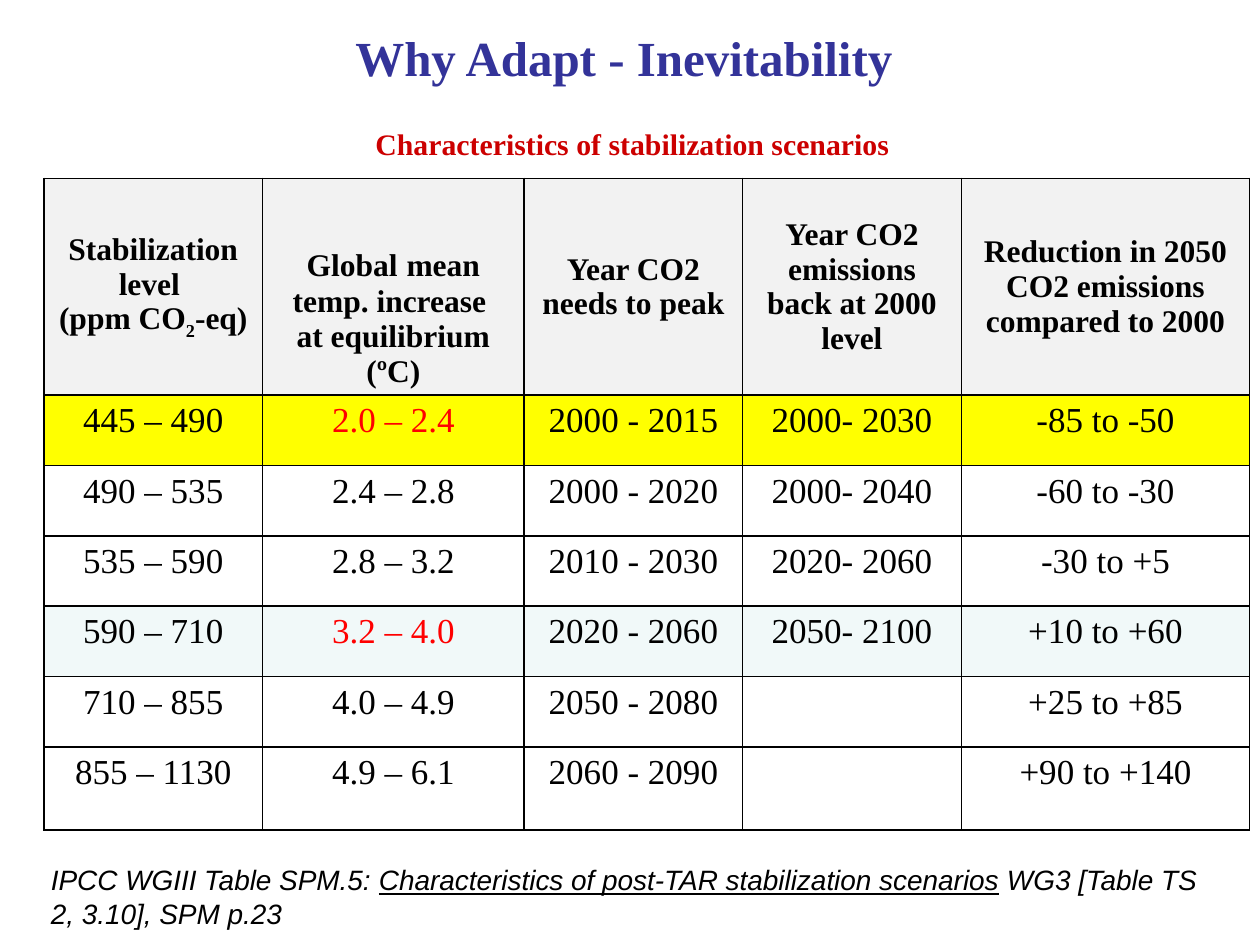
from dataclasses import dataclass

from lxml import etree
from pptx import Presentation
from pptx.dml.color import RGBColor
from pptx.enum.text import MSO_ANCHOR, PP_ALIGN
from pptx.oxml.ns import qn
from pptx.util import Pt

CENTER, LEFT = PP_ALIGN.CENTER, PP_ALIGN.LEFT
TOP, MIDDLE, BOTTOM = MSO_ANCHOR.TOP, MSO_ANCHOR.MIDDLE, MSO_ANCHOR.BOTTOM
SERIF, SANS = "Times New Roman", "Arial"
BLACK, RED, HEADER_GRAY = "000000", "FF0000", "F2F2F2"
HANGING = Pt(27)


@dataclass
class Style:
    size: float
    color: str = BLACK
    font: str = SERIF
    bold: bool = False
    italic: bool = False


@dataclass
class Span:
    text: str
    size: float = 0
    underline: bool = False
    subscript: bool = False


@dataclass
class Header:
    paragraphs: list[list[Span]]
    anchor: MSO_ANCHOR = MIDDLE
    hanging: bool = False


@dataclass
class Scenario:
    values: list[str]
    fill: str = ""
    temperature_color: str = BLACK


HEADER_STYLE = Style(18, bold=True)
HEADERS = [
    Header([[Span("Stabilization")], [Span("level ")],
            [Span("(ppm CO"), Span("2", subscript=True), Span("-eq)")]], hanging=True),
    Header([[Span("Global"), Span(" ", size=20), Span("mean temp. increase ")],
            [Span("at equilibrium (ºC)")]], anchor=BOTTOM),
    Header([[Span("Year CO2 needs to peak")]]),
    Header([[Span("Year CO2 emissions back at 2000 level")]]),
    Header([[Span("Reduction in 2050 CO2 emissions compared to 2000")]]),
]
SCENARIOS = [
    Scenario(["445 – 490", "2.0 – 2.4", "2000 - 2015", "2000- 2030", "-85 to -50"], "FFFF00", RED),
    Scenario(["490 – 535", "2.4 – 2.8", "2000 - 2020", "2000- 2040", "-60 to -30"]),
    Scenario(["535 – 590", "2.8 – 3.2", "2010 - 2030", "2020- 2060", "-30 to +5"]),
    Scenario(["590 – 710", "3.2 – 4.0", "2020 - 2060", "2050- 2100", "+10 to +60"], "F1F9F9", RED),
    Scenario(["710 – 855", "4.0 – 4.9", "2050 - 2080", "", "+25 to +85"]),
    Scenario(["855 – 1130", "4.9 – 6.1", "2060 - 2090", "", "+90 to +140"]),
]
COLUMN_WIDTHS = [124.8, 149.6, 124.8, 125, 164.8]
ROW_HEIGHTS = [123.8] + [40.2] * 5 + [47.5]


def rgb(color: str) -> RGBColor:
    return RGBColor.from_string(color)


def add_span(para, span: Span, style: Style) -> None:
    run = para.add_run()
    run.text = span.text
    font = run.font
    font.name, font.size = style.font, Pt(span.size or style.size)
    font.bold, font.italic = style.bold, style.italic
    font.underline = span.underline
    font.color.rgb = rgb(style.color)
    if span.subscript:
        run._r.get_or_add_rPr().set("baseline", "-25000")


def write(frame, paragraphs: list[list[Span]], style: Style,
          align=CENTER, hanging: bool = False) -> None:
    for index, spans in enumerate(paragraphs):
        para = frame.add_paragraph() if index else frame.paragraphs[0]
        para.alignment = align
        if hanging:
            properties = para._p.get_or_add_pPr()
            properties.set("marL", str(HANGING))
            properties.set("indent", str(-HANGING))
        for span in spans:
            add_span(para, span, style)


def place(shape, left: float, top: float, width: float, height: float) -> None:
    shape.left, shape.top = Pt(left), Pt(top)
    shape.width, shape.height = Pt(width), Pt(height)


def add_text(page, left: float, top: float, width: float, height: float,
             spans: list[Span], style: Style, align=CENTER) -> None:
    box = page.shapes.add_textbox(Pt(left), Pt(top), Pt(width), Pt(height))
    box.text_frame.word_wrap = True
    write(box.text_frame, [spans], style, align)


def format_cell(cell, fill: str, anchor) -> None:
    cell.vertical_anchor = anchor
    properties = cell._tc.get_or_add_tcPr()
    for side in ("a:lnL", "a:lnR", "a:lnT", "a:lnB"):
        line = etree.SubElement(properties, qn(side), w=str(Pt(1)))
        solid = etree.SubElement(line, qn("a:solidFill"))
        etree.SubElement(solid, qn("a:srgbClr"), val=BLACK)
    if fill:
        cell.fill.solid()
        cell.fill.fore_color.rgb = rgb(fill)
    else:
        cell.fill.background()


def add_scenario_table(page, left: float, top: float) -> None:
    table = page.shapes.add_table(
        len(ROW_HEIGHTS), len(COLUMN_WIDTHS), Pt(left), Pt(top),
        Pt(sum(COLUMN_WIDTHS)), Pt(sum(ROW_HEIGHTS))).table
    table.first_row = table.horz_banding = False
    for column, width in zip(table.columns, COLUMN_WIDTHS):
        column.width = Pt(width)
    for row, height in zip(table.rows, ROW_HEIGHTS):
        row.height = Pt(height)

    # Header row
    for index, header in enumerate(HEADERS):
        cell = table.cell(0, index)
        format_cell(cell, HEADER_GRAY, header.anchor)
        write(cell.text_frame, header.paragraphs, HEADER_STYLE, hanging=header.hanging)

    # Scenario rows
    for row_index, scenario in enumerate(SCENARIOS, start=1):
        for index, value in enumerate(scenario.values):
            cell = table.cell(row_index, index)
            format_cell(cell, scenario.fill, TOP)
            color = scenario.temperature_color if index == 1 else BLACK
            if value:
                write(cell.text_frame, [[Span(value)]], Style(20, color), hanging=True)


def main() -> None:
    deck = Presentation()
    deck.slide_width, deck.slide_height = Pt(720), Pt(540)
    page = deck.slides.add_slide(deck.slide_layouts[5])

    # Title
    title = page.shapes.title
    place(title, 0, 0, 720, 65)
    title.text_frame.vertical_anchor = MIDDLE
    write(title.text_frame, [[Span("Why Adapt - Inevitability ")]],
          Style(28, "333399", bold=True))

    # Table with its caption and source
    add_scenario_table(page, 25.2, 102)
    add_text(page, 37.5, 68.5, 648, 27.5, [Span("Characteristics of stabilization scenarios")],
             Style(17, "CC0000", bold=True))
    add_text(page, 22, 489.5, 680, 46,
             [Span("IPCC WGIII Table SPM.5: "),
              Span("Characteristics of post-TAR stabilization scenarios", underline=True),
              Span(" WG3 [Table TS 2, 3.10], SPM p.23")],
             Style(16, font=SANS, italic=True), LEFT)

    deck.save("out.pptx")


if __name__ == "__main__":
    main()
